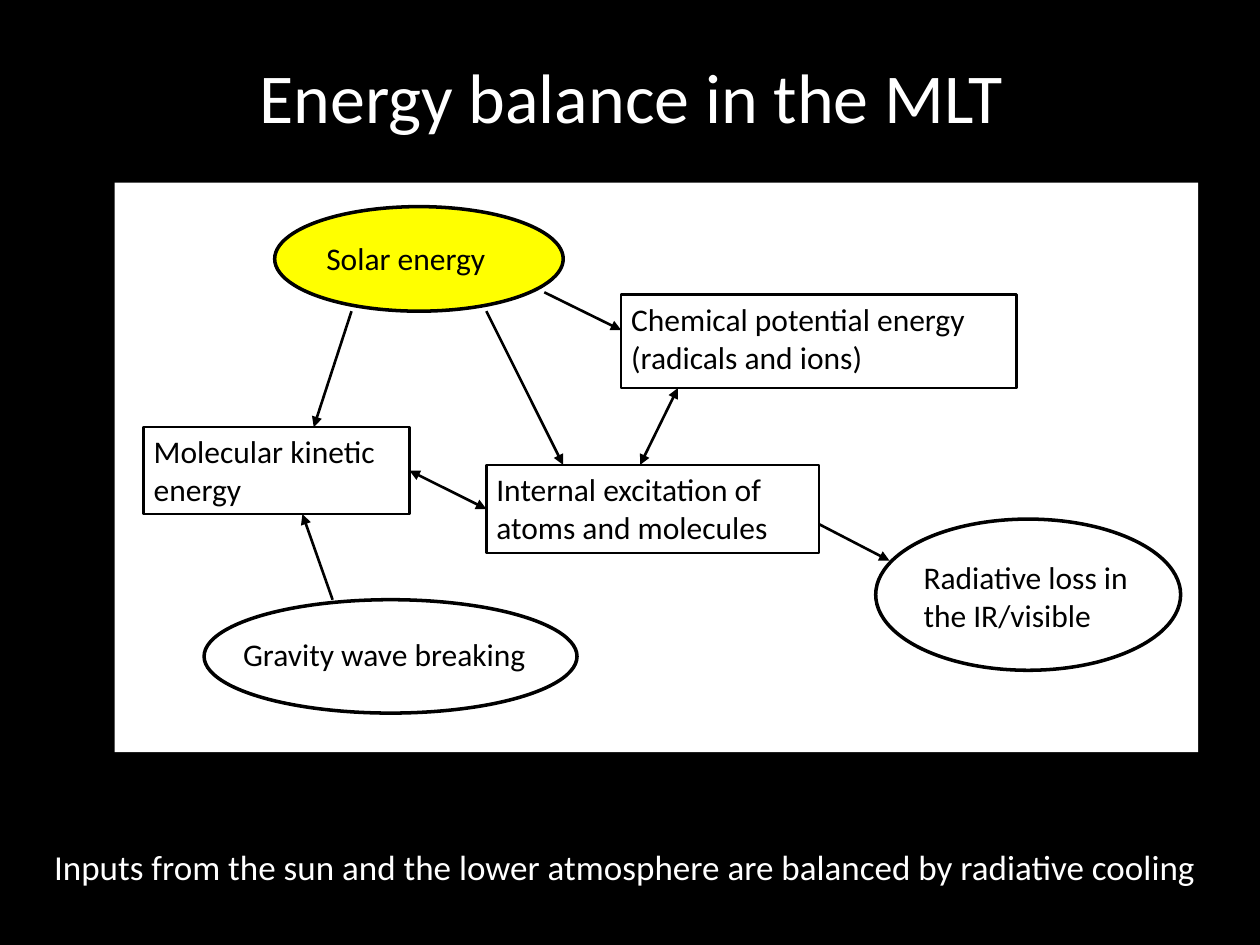
"""Build the slide on the energy balance in the MLT."""
from typing import NamedTuple, Optional

import pptx
import pptx.dml.color
import pptx.enum.shapes
import pptx.enum.text
import pptx.oxml.ns
import pptx.util
from lxml import etree

Inches = pptx.util.Inches
Pt = pptx.util.Pt
RGBColor = pptx.dml.color.RGBColor
MSO_SHAPE = pptx.enum.shapes.MSO_SHAPE
MSO_ANCHOR = pptx.enum.text.MSO_ANCHOR
PP_ALIGN = pptx.enum.text.PP_ALIGN
qn = pptx.oxml.ns.qn

BLACK = RGBColor(0x00, 0x00, 0x00)
WHITE = RGBColor(0xFF, 0xFF, 0xFF)
YELLOW = RGBColor(0xFF, 0xFF, 0x00)
FONT = "Calibri"
LEFT_SIDE, RIGHT_SIDE = 1, 3


class Box(NamedTuple):
    left: float
    top: float
    width: float
    height: float


class Node(NamedTuple):
    box: Box
    text: str = ""
    kind: MSO_SHAPE = MSO_SHAPE.RECTANGLE
    fill: Optional[RGBColor] = WHITE
    line: float = 0


class Arrow(NamedTuple):
    x1: float
    y1: float
    x2: float
    y2: float
    both: bool = False


PANEL = Node(Box(0.91, 1.45, 8.6, 4.52))
OVALS = [
    Node(Box(2.18, 1.64, 2.29, 0.83), kind=MSO_SHAPE.OVAL, fill=YELLOW, line=2),
    Node(Box(1.62, 4.76, 2.96, 0.9), kind=MSO_SHAPE.OVAL, line=2),
    Node(Box(6.95, 4.12, 2.42, 1.2), kind=MSO_SHAPE.OVAL, line=2),
]
LABELS = [
    Node(Box(2.51, 1.86, 1.68, 0.46), "Solar energy", fill=None),
    Node(Box(1.85, 5, 2.47, 0.41), "Gravity wave breaking"),
    Node(Box(7.25, 4.39, 1.83, 0.68), "Radiative loss in the IR/visible"),
]
KINETIC = Node(Box(1.14, 3.39, 2.11, 0.69), "Molecular kinetic energy", line=1.5)
INTERNAL = Node(Box(3.86, 3.69, 2.64, 0.7),
                "Internal excitation of atoms and molecules", line=1.5)
CHEMICAL = Node(Box(4.93, 2.34, 3.14, 0.74),
                "Chemical potential energy (radicals and ions)", line=1.5)
EXCHANGE = Arrow(3.25, 3.69, 3.86, 4, both=True)
ARROWS = [
    Arrow(2.79, 2.47, 2.49, 3.39),
    Arrow(2.64, 4.76, 2.4, 4.08),
    Arrow(3.86, 2.47, 4.47, 3.69),
    Arrow(4.32, 2.32, 4.93, 2.62),
    Arrow(6.5, 4.16, 7.06, 4.45),
    Arrow(5.38, 3.08, 5.08, 3.69, both=True),
]
CAPTION = "Inputs from the sun and the lower atmosphere are balanced by radiative cooling"


def write(tf: pptx.text.text.TextFrame, text: str, size: float, color: RGBColor,
          align: PP_ALIGN = PP_ALIGN.LEFT) -> None:
    """Fill a text frame with one formatted paragraph."""
    tf.text = text
    tf.word_wrap = True
    p = tf.paragraphs[0]
    p.alignment = align
    r = p.runs[0]
    r.font.name, r.font.size, r.font.color.rgb = FONT, Pt(size), color


def set_insets(tf: pptx.text.text.TextFrame) -> None:
    """Anchor text at the top with narrow margins."""
    tf.vertical_anchor = MSO_ANCHOR.TOP
    tf.margin_left = tf.margin_right = Inches(0.08)
    tf.margin_top = tf.margin_bottom = Inches(0.04)


def add_node(s: pptx.slide.Slide, node: Node) -> pptx.shapes.autoshape.Shape:
    """Draw a shape with its optional outline and text."""
    sp = s.shapes.add_shape(node.kind, *map(Inches, node.box))
    sp.shadow.inherit = False
    if node.fill is None:
        sp.fill.background()
    else:
        sp.fill.solid()
        sp.fill.fore_color.rgb = node.fill
    if node.line:
        sp.line.color.rgb = BLACK
        sp.line.width = Pt(node.line)
    else:
        sp.line.fill.background()
    if node.text:
        set_insets(sp.text_frame)
        write(sp.text_frame, node.text, 18, BLACK)
    return sp


def add_arrow(s: pptx.slide.Slide, arrow: Arrow) -> pptx.shapes.connector.Connector:
    """Draw a straight connector with one or two arrowheads."""
    sp = s.shapes.add_connector(
        pptx.enum.shapes.MSO_CONNECTOR.STRAIGHT,
        *map(Inches, (arrow.x1, arrow.y1, arrow.x2, arrow.y2)))
    sp.line.color.rgb = BLACK
    sp.line.width = Pt(1.5)
    ln = sp.line._get_or_add_ln()
    for end in ("a:headEnd", "a:tailEnd") if arrow.both else ("a:tailEnd",):
        etree.SubElement(ln, qn(end), type="triangle")
    etree.SubElement(sp._element.spPr, qn("a:effectLst"))
    return sp


def main() -> None:
    """Build and save the slide."""
    prs = pptx.Presentation()
    prs.slide_width, prs.slide_height = Inches(10), Inches(7.5)
    s = prs.slides.add_slide(prs.slide_layouts[5])
    s.background.fill.solid()
    s.background.fill.fore_color.rgb = BLACK

    title = s.shapes.title
    title.left, title.top, title.width, title.height = map(
        Inches, Box(0.51, 0.13, 9, 1.25))
    title.text_frame.vertical_anchor = MSO_ANCHOR.MIDDLE
    write(title.text_frame, "Energy balance in the MLT", 40, WHITE, PP_ALIGN.CENTER)

    for node in [PANEL, *OVALS, *LABELS, CHEMICAL]:
        add_node(s, node)
    kinetic, internal = add_node(s, KINETIC), add_node(s, INTERNAL)
    for arrow in ARROWS:
        add_arrow(s, arrow)
    exchange = add_arrow(s, EXCHANGE)
    exchange.begin_connect(kinetic, RIGHT_SIDE)
    exchange.end_connect(internal, LEFT_SIDE)

    caption = s.shapes.add_textbox(*map(Inches, Box(0.35, 6.67, 9.65, 0.55)))
    set_insets(caption.text_frame)
    write(caption.text_frame, CAPTION, 20, WHITE)
    prs.save("out.pptx")


if __name__ == "__main__":
    main()
